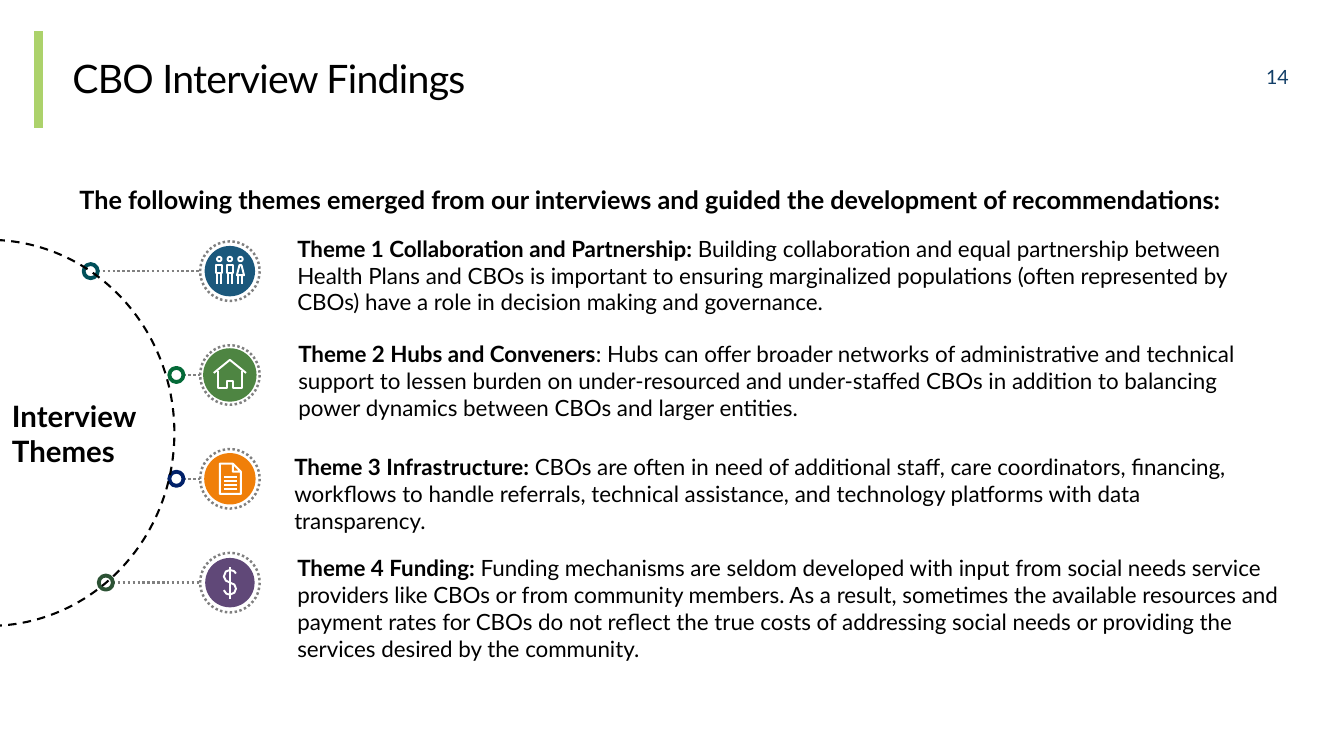
from math import cos, pi, sin

from lxml.etree import SubElement
from pptx import Presentation
from pptx.dml.color import RGBColor
from pptx.enum.dml import MSO_LINE
from pptx.enum.shapes import MSO_CONNECTOR, MSO_SHAPE
from pptx.enum.text import MSO_ANCHOR, PP_ALIGN
from pptx.oxml.ns import qn
from pptx.util import Inches, Pt

FONT, BLACK, WHITE, GREY = "Lato", "000000", "FFFFFF", "808080"
TITLE = "CBO Interview Findings"
NUMBER = "14"
LEAD = ("The following themes emerged from our interviews and guided "
        "the development of recommendations:")
HUB = "Interview Themes"

# bold part, plain part, text left, top, width, node left, node colour, disc colour, disc size
THEMES = [
    ("Theme 1 Collaboration and Partnership: ",
     "Building collaboration and equal partnership between Health Plans and CBOs is important "
     "to ensuring marginalized populations (often represented by CBOs) have a role in decision "
     "making and governance.",
     2.85, 2.28, 9.65, 0.83, "004F59", "1B587C", 0.5),
    ("Theme 2 Hubs and Conveners",
     ": Hubs can offer broader networks of administrative and technical support to lessen burden "
     "on under-resourced and under-staffed CBOs in addition to balancing power dynamics between "
     "CBOs and larger entities.",
     2.86, 3.33, 9.65, 1.68, "046A38", "4E8542", 0.53),
    ("Theme 3 Infrastructure: ",
     "CBOs are often in need of additional staff, care coordinators, financing, workflows to "
     "handle referrals, technical assistance, and technology platforms with data transparency.",
     2.82, 4.45, 9.58, 1.68, "012169", "F07F09", 0.51),
    ("Theme 4 Funding: ",
     "Funding mechanisms are seldom developed with input from social needs service providers "
     "like CBOs or from community members. As a result, sometimes the available resources and "
     "payment rates for CBOs do not reflect the true costs of addressing social needs or "
     "providing the services desired by the community.",
     2.85, 5.45, 9.95, 0.98, "2C5234", "604878", 0.49),
]

# Icon strokes: points in hundredths of an inch from the disc centre
HOUSE = [
    [(-16, -2), (0, -15), (16, -2)],
    [(-12, -4), (-12, 13), (-3, 13), (-3, 6), (3, 6), (3, 13), (12, 13), (12, -4)],
]
PAGE = [
    [(3, -15), (-10, -15), (-10, 15), (11, 15), (11, -7), (3, -15), (3, -7), (11, -7)],
] + [[(-6, y), (7, y)] for y in (-2, 2, 6, 10)]
DOLLAR = [
    [(0, -15), (0, 16)],
    [(6, -9), (4, -11.5), (0, -12.5), (-4, -11), (-6, -6), (-4, -2), (0, 0),
     (4.5, 2), (6, 6), (4.5, 10), (0, 12), (-3.5, 11), (-6, 7.5)],
]


def people():
    strokes = []
    for x, top, foot, hip in ((-10.5, 3, 3, 2), (0, 3, 3, 2), (10.5, 1, 3.5, 4)):
        strokes.append([(x + 2.2 * cos(k * pi / 8), -12 + 2.2 * sin(k * pi / 8))
                        for k in range(17)])
        strokes.append([(x - top, -6), (x + top, -6), (x + foot, hip),
                        (x - foot, hip), (x - top, -6)])
        strokes += [[(x + side, hip), (x + side, 13)] for side in (-2, 2)]
    return strokes


ICONS = [people(), HOUSE, PAGE, DOLLAR]
FIRST, STEP = 2.69, 1.03
MID, HALO, NODE = 2.28, 0.59, 0.14

prs = Presentation()
prs.slide_width, prs.slide_height = Inches(13.33), Inches(7.5)
slide = prs.slides.add_slide(prs.slide_layouts[6])
shapes = slide.shapes


def color(code):
    return RGBColor.from_string(code)


def stroke(item, code, width, dash=None):
    item.line.color.rgb = color(code)
    item.line.width = Pt(width)
    if dash:
        item.line.dash_style = dash


def style(item, fill=None, line=None):
    """Clear the shadow; set the fill and a (colour, width, dash) line, or none."""
    item.shadow.inherit = False
    if fill:
        item.fill.solid()
        item.fill.fore_color.rgb = color(fill)
    else:
        item.fill.background()
    if line:
        stroke(item, *line)
    else:
        item.line.fill.background()


def link(x1, y1, x2, y2, *line):
    item = shapes.add_connector(MSO_CONNECTOR.STRAIGHT, *map(Inches, (x1, y1, x2, y2)))
    stroke(item, *line)
    SubElement(item._element.spPr, qn("a:effectLst"))


def disc(x, y, size, fill=None, line=None):
    """Draw a circle about the centre (x, y)."""
    box = map(Inches, (x - size / 2, y - size / 2, size, size))
    style(shapes.add_shape(MSO_SHAPE.OVAL, *box), fill, line)


def write(box, runs, size, tint=BLACK):
    """Add a wrapped text box of (text, bold) runs; return its frame."""
    frame = shapes.add_textbox(*map(Inches, box)).text_frame
    frame.word_wrap = True
    for text, bold in runs:
        run = frame.paragraphs[0].add_run()
        run.text = text
        run.font.name, run.font.size, run.font.bold = FONT, Pt(size), bold
        run.font.color.rgb = color(tint)
    return frame


def icon(x, y, strokes):
    paths = [[(Inches(x + a / 100), Inches(y + b / 100)) for a, b in path]
             for path in strokes]
    pen = shapes.build_freeform(*paths[0][0], scale=1.0)
    for i, path in enumerate(paths):
        if i:
            pen.move_to(*path[0])
        pen.add_line_segments(path[1:], close=False)
    style(pen.convert_to_shape(), line=(WHITE, 1.4))


# Header
link(0.38, 0.31, 0.38, 1.27, "ACD26B", 6)
head = write((0.62, 0.08, 12.18, 1.45), [(TITLE, False)], 28)
head.vertical_anchor = MSO_ANCHOR.MIDDLE
head.paragraphs[0].line_spacing = 0.9
head.paragraphs[0].runs[0].font._element.set("spc", "-50")
page = write((12.43, 0.52, 0.48, 0.48), [(NUMBER, False)], 14, "113E67")
page.margin_left = page.margin_right = page.margin_top = page.margin_bottom = 0
page.vertical_anchor = MSO_ANCHOR.MIDDLE
page.paragraphs[0].alignment = PP_ALIGN.CENTER

# Themes
write((0.69, 1.78, 12.04, 0.4), [(LEAD, True)], 18)
write((0.02, 3.9, 2.3, 0.8), [(HUB, True)], 21)
dots = (GREY, 1.75, MSO_LINE.ROUND_DOT)
for i, (name, body, left, top, width, node, ring, fill, size) in enumerate(THEMES):
    y = FIRST + i * STEP
    link(node + NODE, y, MID - HALO / 2, y, *dots)
    disc(node + NODE / 2, y, NODE, WHITE, (ring, 2.75))
    disc(MID, y, HALO, line=dots)
    disc(MID, y, size, fill)
    icon(MID, y, ICONS[i])
    write((left, top, width, 0.91), [(name, True), (body, False)], 16)

arc = shapes.add_shape(MSO_SHAPE.ARC, *map(Inches, (-1.94, 2.38, 3.67, 3.83)))
arc.adjustments[0], arc.adjustments[1] = 163.27, 55.27
style(arc, line=(BLACK, 1.5, MSO_LINE.DASH))

prs.save("out.pptx")
